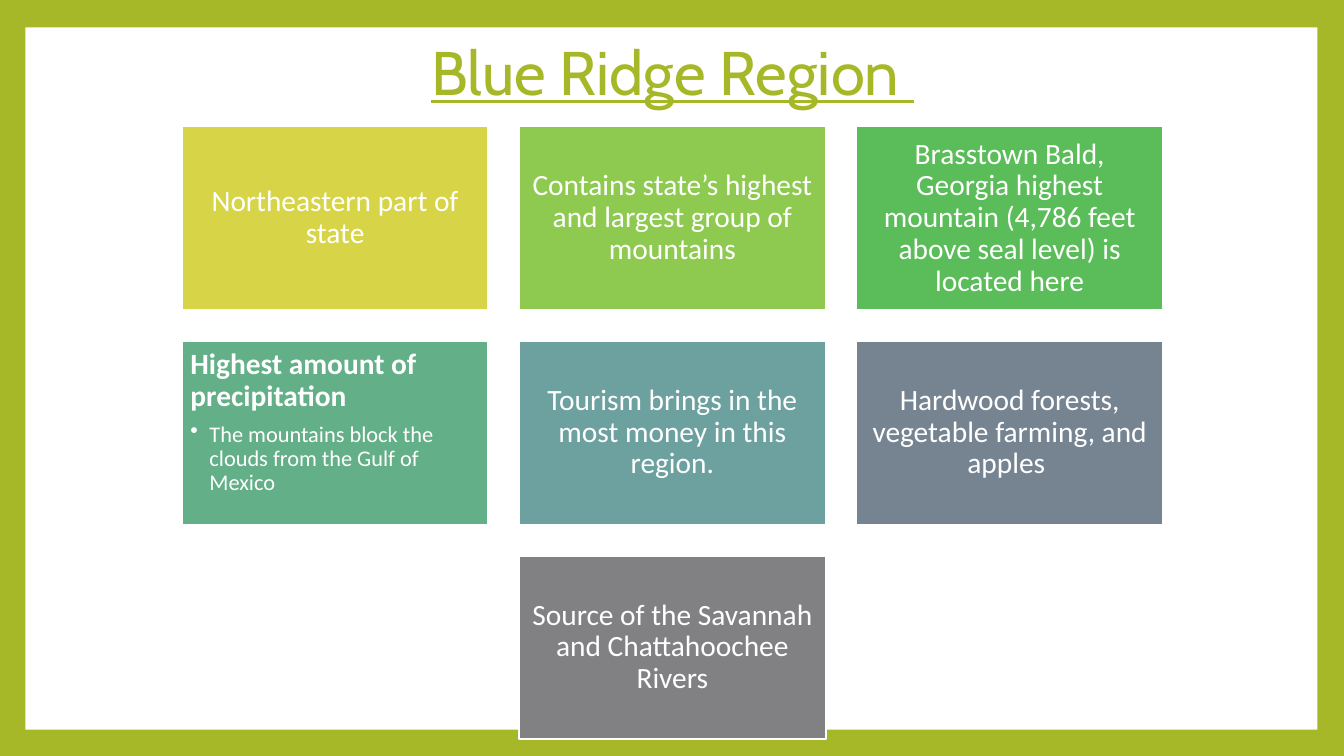
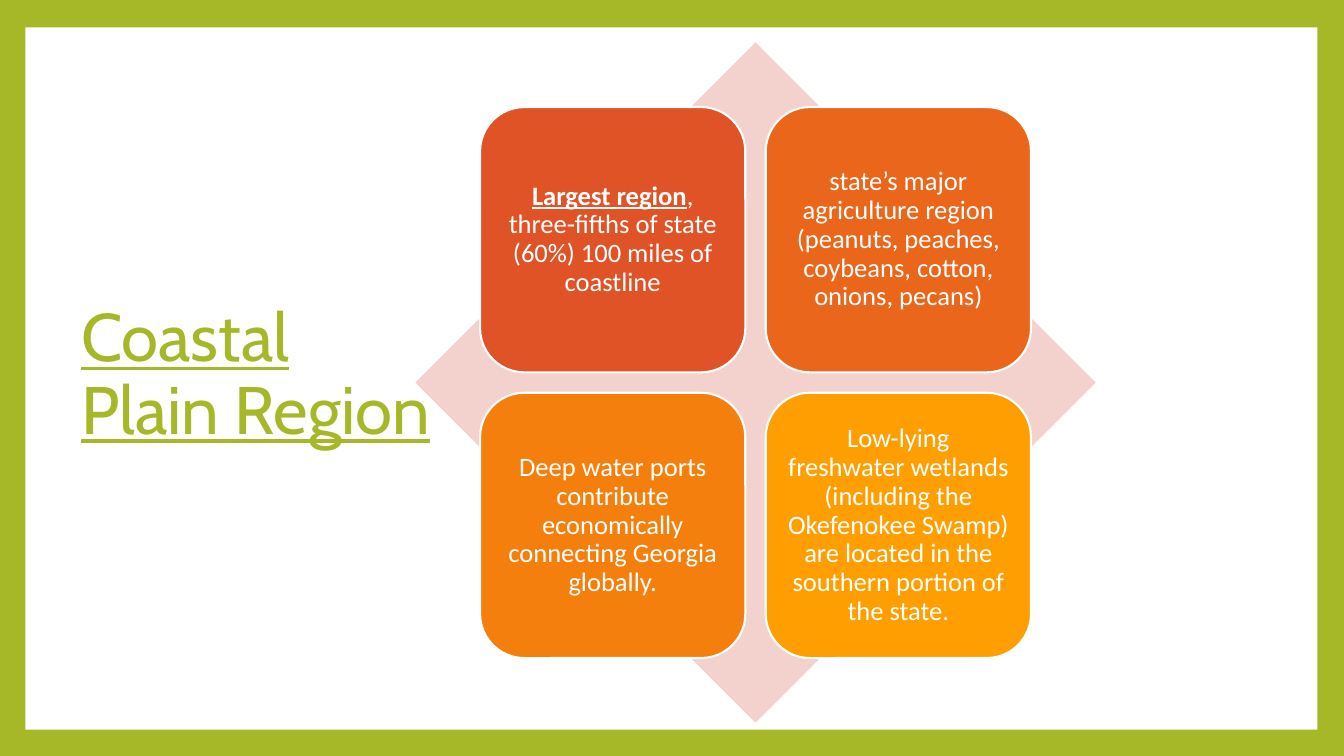
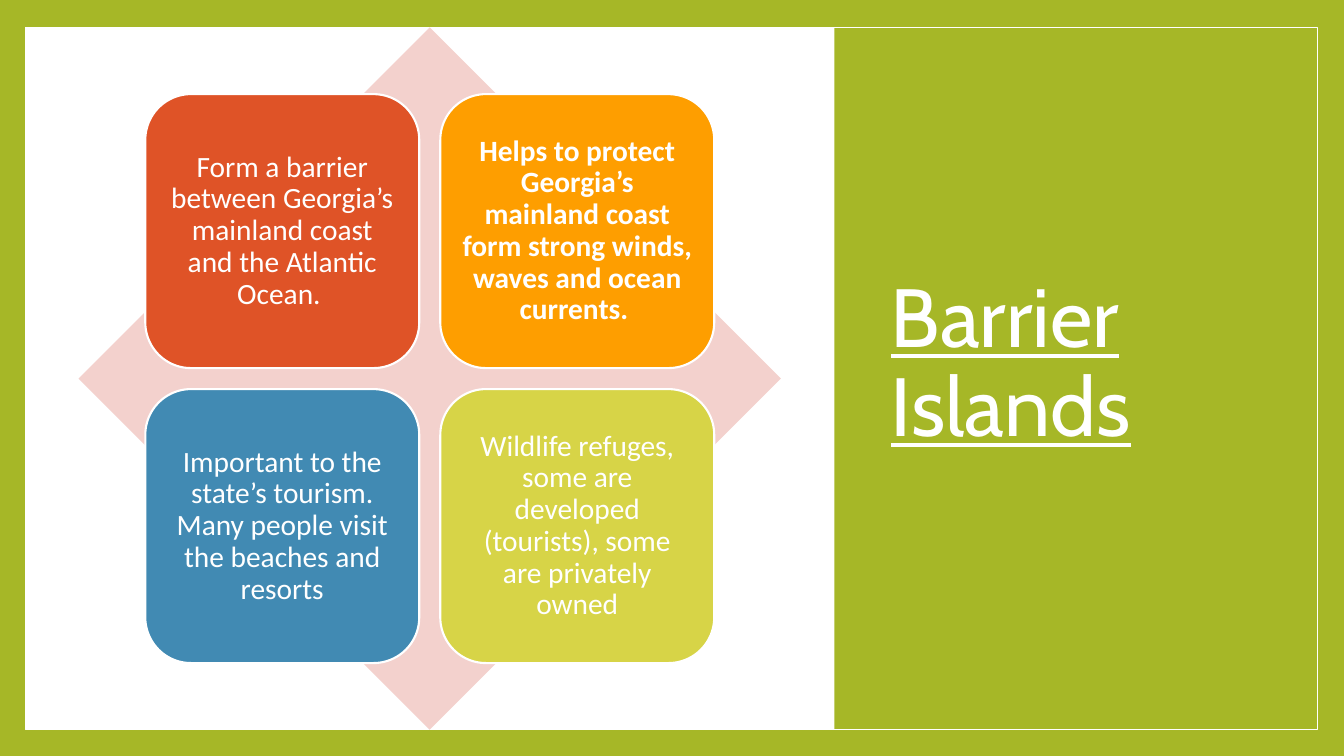
"""Build three slides on the Blue Ridge, Coastal Plain and Barrier Islands regions of Georgia."""
from dataclasses import dataclass

from lxml.etree import SubElement
from pptx import Presentation
from pptx.dml.color import RGBColor
from pptx.enum.shapes import MSO_SHAPE
from pptx.enum.text import MSO_ANCHOR, PP_ALIGN
from pptx.oxml.ns import qn
from pptx.util import Cm, Pt


@dataclass(frozen=True)
class Theme:
    green: str = "A6B727"
    white: str = "FFFFFF"
    pink: str = "F3D1CD"
    red: str = "DF5327"
    amber: str = "FE9E00"
    blue: str = "418AB3"
    yellow: str = "D7D447"
    title_font: str = "Cabin"
    body_font: str = "Calibri"
    wide_title: int = 44
    side_title: int = 48
    band_title: int = 59
    body: int = 21
    compact_body: int = 19
    detail: int = 16
    tile_line: float = 1.5
    outline: float = 1


theme = Theme()


def add_box(slide, kind, left, top, width, height, fill=None, line=None):
    shape = slide.shapes.add_shape(kind, Cm(left), Cm(top), Cm(width), Cm(height))
    shape.shadow.inherit = False
    if fill:
        shape.fill.solid()
        shape.fill.fore_color.rgb = RGBColor.from_string(fill)
    else:
        shape.fill.background()
    if line:
        shape.line.color.rgb = RGBColor.from_string(theme.white)
        shape.line.width = Pt(line)
    else:
        shape.line.fill.background()
    return shape


def write(shape, text, size=theme.body, font=theme.body_font, color=theme.white, bold=False,
          underline=False, align=PP_ALIGN.CENTER, anchor=MSO_ANCHOR.MIDDLE, inset=None,
          after=0, bullet=False, same_paragraph=False):
    frame = shape.text_frame
    frame.word_wrap = True
    frame.vertical_anchor = anchor
    if inset is not None:
        frame.margin_left = frame.margin_right = Cm(inset)
        frame.margin_top = frame.margin_bottom = Cm(inset)
    paragraph = frame.paragraphs[-1]
    if paragraph.runs and not same_paragraph:
        paragraph = frame.add_paragraph()
    paragraph.alignment = align
    paragraph.line_spacing = 0.9
    paragraph.space_after = Pt(after)
    if bullet:
        properties = paragraph._p.get_or_add_pPr()
        properties.set("marL", str(Cm(0.48)))
        properties.set("indent", str(-Cm(0.48)))
        SubElement(properties, qn("a:buChar")).set("char", "•")
    run = paragraph.add_run()
    run.text = text
    run.font.size = Pt(size)
    run.font.name = font
    run.font.bold = bold
    run.font.underline = underline
    run.font.color.rgb = RGBColor.from_string(color)


presentation = Presentation()
presentation.slide_width = Cm(33.87)
presentation.slide_height = Cm(19.05)
panel = (0.64, 0.69, 32.56, 17.7)

titles = [
    ("Blue Ridge Region ", (3.23, 0.03, 27.43, 3.76), theme.wide_title, theme.green, PP_ALIGN.CENTER),
    ("Coastal Plain Region", (1.8, 1.7, 9.35, 15.57), theme.side_title, theme.green, PP_ALIGN.LEFT),
    ("Barrier Islands", (22.2, 1.7, 9.93, 15.01), theme.band_title, theme.white, PP_ALIGN.LEFT),
]
slides = []
for text, place, size, color, align in titles:
    slide = presentation.slides.add_slide(presentation.slide_layouts[6])
    slide.background.fill.solid()
    slide.background.fill.fore_color.rgb = RGBColor.from_string(theme.green)
    add_box(slide, MSO_SHAPE.RECTANGLE, *panel, fill=theme.white)
    if color == theme.white:
        add_box(slide, MSO_SHAPE.RECTANGLE, 21.03, 0, 12.84, 19.05, fill=theme.green)
        add_box(slide, MSO_SHAPE.RECTANGLE, *panel, line=theme.outline)
    title = slide.shapes.add_textbox(*[Cm(length) for length in place])
    write(title, text, size=size, font=theme.title_font, color=color, underline=True, align=align)
    slides.append(slide)
blue_ridge, coastal_plain, barrier_islands = slides

facts = [
    (0, 0, "D7D447", "Northeastern part of state"),
    (1, 0, "8FCA50", "Contains state’s highest and largest group of mountains"),
    (2, 0, "5ABD59", "Brasstown Bald, Georgia highest mountain (4,786 feet above seal level) is located here"),
    (0, 1, "62AF88", None),
    (1, 1, "6CA1A0", "Tourism brings in the most money in this region."),
    (2, 1, "768492", "Hardwood forests, vegetable farming, and apples "),
    (1, 2, "818183", "Source of the Savannah and Chattahoochee Rivers"),
]
for column, row, fill, text in facts:
    tile = add_box(blue_ridge, MSO_SHAPE.RECTANGLE, 4.58 + 8.5 * column, 3.18 + 5.41 * row,
                   7.73, 4.63, fill=fill, line=theme.tile_line)
    if text:
        write(tile, text, inset=0.22)
    else:
        write(tile, "Highest amount of precipitation", bold=True, align=PP_ALIGN.LEFT,
              anchor=MSO_ANCHOR.TOP, inset=0.22, after=7)
        write(tile, "The mountains block the clouds from the Gulf of Mexico", size=theme.detail,
              align=PP_ALIGN.LEFT, anchor=MSO_ANCHOR.TOP, bullet=True)

matrices = [
    (coastal_plain, 10.47, 1.07, 17.14, theme.compact_body, 0.2, [
        (theme.red, [("Largest region", True, True),
                     (", three-fifths of state (60%) 100 miles of coastline", False, False)]),
        ("E9661A", [("state’s major agriculture region (peanuts, peaches, coybeans, cotton, "
                     "onions, pecans)", False, False)]),
        ("F47F0D", [("Deep water ports contribute economically connecting Georgia globally.",
                     False, False)]),
        (theme.amber, [("Low-lying freshwater wetlands (including the Okefenokee Swamp) are located "
                        "in the southern portion of the state.", False, False)]),
    ]),
    (barrier_islands, 1.98, 0.69, 17.7, theme.body, 0.22, [
        (theme.red, [("Form a barrier between Georgia’s mainland coast and the Atlantic Ocean. ",
                      False, False)]),
        (theme.amber, [("Helps to protect Georgia’s mainland coast form strong winds, waves and "
                        "ocean currents. ", True, False)]),
        (theme.blue, [("Important to the state’s tourism. Many people visit the beaches and resorts",
                       False, False)]),
        (theme.yellow, [("Wildlife refuges, some are developed (tourists), some are privately owned",
                         False, False)]),
    ]),
]
for slide, left, top, side, size, inset, tiles in matrices:
    add_box(slide, MSO_SHAPE.DIAMOND, left, top, side, side, fill=theme.pink)
    for index, (fill, runs) in enumerate(tiles):
        row, column = divmod(index, 2)
        tile = add_box(slide, MSO_SHAPE.ROUNDED_RECTANGLE, left + side * (0.095 + 0.42 * column),
                       top + side * (0.095 + 0.42 * row), side * 0.39, side * 0.39,
                       fill=fill, line=theme.tile_line)
        for text, bold, underline in runs:
            write(tile, text, size=size, bold=bold, underline=underline, inset=inset,
                  same_paragraph=True)

presentation.save("out.pptx")
